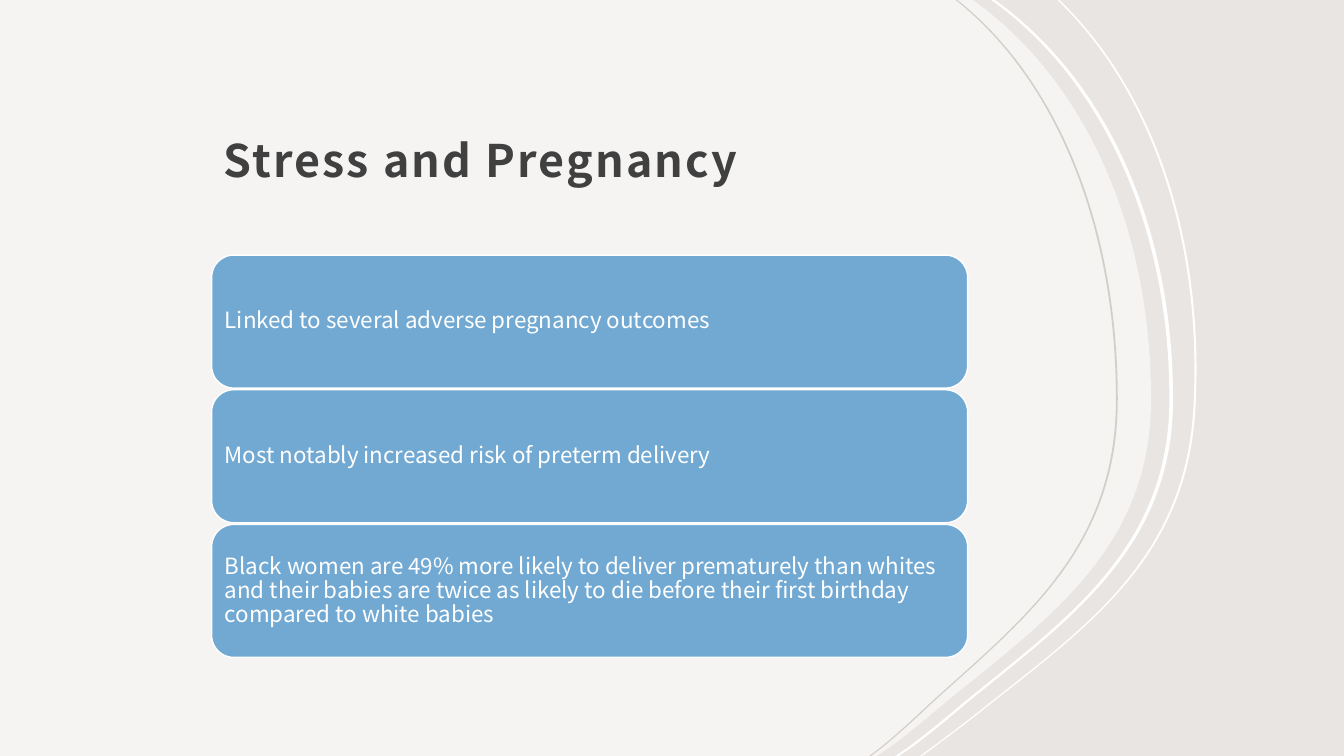
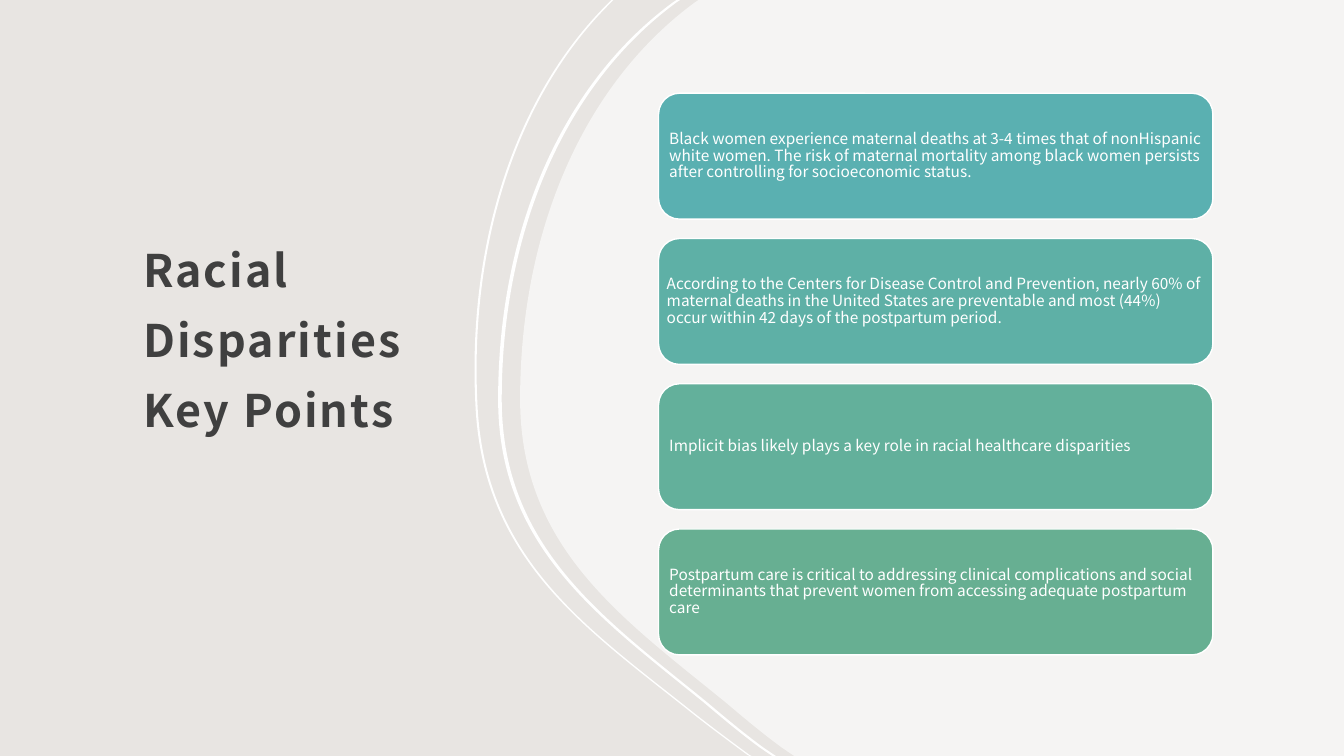
from lxml.etree import SubElement
from pptx import Presentation
from pptx.dml.color import RGBColor
from pptx.enum.shapes import MSO_SHAPE
from pptx.enum.text import MSO_ANCHOR, PP_ALIGN
from pptx.oxml.ns import qn
from pptx.util import Pt

WIDTH, HEIGHT = 960, 540
FONT = "Noto Sans CJK JP"
SAND, WHITE, GREY, DARK = "E8E5E2", "FFFFFF", "D4CEC8", "404040"
BLUE = "72A9D2"
TITLE = {"size": Pt(32), "bold": True, "name": FONT}

EDGE = [
    (127.5, 0), (125.3, 1.4),
    (45.4, 59.8), (0, 164.9), (0, 285.1),
    (0, 391), (72.7, 441.4), (146.9, 501.8),
    (160.6, 513.4), (173.5, 524.2), (187.2, 534.2), (195.8, 540),
]
SLIM = [
    (97.2, 0), (95, 2.2),
    (28.8, 67.7), (-5.8, 172.8), (0, 288.7),
    (5, 399.6), (78.5, 448.6), (153.4, 508.3),
    (167, 519.1), (180.7, 529.2), (194.4, 539.3), (195.8, 540),
]
SLIM_STRAND = (SLIM, 31.9, 1.5, 1, WHITE)
BOLD_STRAND = (EDGE, 15.7, 2.6, 1, WHITE)
GREY_STRAND = (EDGE, -23.8, 1.3, 0.9, GREY)


def rgb(value):
    """Turn a hex string into a colour."""
    return RGBColor.from_string(value)


def apply(target, values):
    """Set every attribute in a dict of format values."""
    for name, value in values.items():
        setattr(target, name, value)


def segments(points):
    """Split points into a line, three cubic curves and a line."""
    curves = [points[i:i + 3] for i in range(2, len(points) - 1, 3)]
    return [points[:1], points[1:2], *curves, points[-1:]]


def add_outline(s, parts, color, alpha=None):
    """Draw a filled closed outline of straight and curved segments."""
    parts = [[(Pt(x), Pt(y)) for x, y in part] for part in parts]
    builder = s.shapes.build_freeform(*parts[0][-1], scale=1.0)
    builder.add_line_segments([part[-1] for part in parts[1:]], close=True)
    sp = builder.convert_to_shape()
    lines = list(sp.element.iter(qn("a:lnTo")))
    for line, part in zip(lines, parts[1:]):
        if len(part) == 3:
            line.tag
            curve = line.makeelement(qn("a:cubicBezTo"))
            for x, y in part:
                pt = SubElement(curve, qn("a:pt"))
                pt.set("x", str(x - sp.left))
                pt.set("y", str(y - sp.top))
            line.getparent().replace(line, curve)
    sp.shadow.inherit = False
    sp.fill.solid()
    sp.fill.fore_color.rgb = rgb(color)
    sp.line.fill.background()
    if alpha:
        clr = sp.element.spPr.find(".//" + qn("a:srgbClr"))
        SubElement(clr, qn("a:alpha")).set("val", str(alpha * 1000))


def add_sweep(s, peak, facing, strands):
    """Draw the pale panel and the strands that follow its curved edge."""
    far = 0 if facing > 0 else WIDTH
    edge = [(peak - facing * d, y) for d, y in EDGE]
    add_outline(s, [[(far, 0)], *segments(edge), [(far, HEIGHT)]], WHITE, 60)
    for curve, offset, width, scale, color in strands:
        outer = [(peak + facing * (offset - scale * d), y) for d, y in curve]
        inner = [(x - facing * width, y) for x, y in reversed(outer)]
        add_outline(s, segments(outer) + segments(inner), color)


def write(tf, text, font, color, spacing):
    """Write one left-aligned paragraph."""
    tf.word_wrap = True
    p = tf.paragraphs[0]
    apply(p, {"alignment": PP_ALIGN.LEFT, "line_spacing": spacing})
    r = p.add_run()
    r.text = text
    apply(r.font, font)
    r.font.color.rgb = rgb(color)


def add_title(s, box, text, anchor, bottom=7.2):
    """Place the slide title in its box."""
    sp = s.shapes.add_textbox(*map(Pt, box))
    tf = sp.text_frame
    apply(tf, {"vertical_anchor": anchor, "margin_left": Pt(8.64), "margin_top": Pt(8.64),
               "margin_right": Pt(8.64), "margin_bottom": Pt(bottom)})
    write(tf, text, TITLE, DARK, 1.3)
    for props in sp.element.iter(qn("a:rPr")):
        props.set("spc", "150")


def add_cards(s, box, gap, size, cards):
    """Stack equal rounded cards of (text, colour, inset) in a box."""
    x, y, w, h = box
    height = (h - gap * (len(cards) - 1)) / len(cards)
    for i, (text, color, inset) in enumerate(cards):
        top = y + i * (height + gap)
        sp = s.shapes.add_shape(MSO_SHAPE.ROUNDED_RECTANGLE, *map(Pt, (x, top, w, height)))
        sp.shadow.inherit = False
        sp.fill.solid()
        sp.fill.fore_color.rgb = rgb(color)
        sp.line.color.rgb = rgb(WHITE)
        sp.line.width = Pt(1)
        tf = sp.text_frame
        tf.vertical_anchor = MSO_ANCHOR.MIDDLE
        apply(tf, {f"margin_{side}": Pt(inset) for side in ("left", "top", "right", "bottom")})
        write(tf, text, {"size": Pt(size), "name": FONT}, WHITE, 0.9)


def new_slide(prs):
    """Add a blank slide with the sand background."""
    s = prs.slides.add_slide(prs.slide_layouts[6])
    s.background.fill.solid()
    s.background.fill.fore_color.rgb = rgb(SAND)
    return s


def stress_slide(prs):
    """Build the slide on stress and pregnancy."""
    s = new_slide(prs)
    add_sweep(s, 822.2, 1, [SLIM_STRAND, BOLD_STRAND, GREY_STRAND])
    add_title(s, (151.2, 34.6, 540, 105.8), "Stress and Pregnancy", MSO_ANCHOR.BOTTOM)
    add_cards(s, (151.2, 182.2, 540, 287.4), 1.2, 16, [
        ("Linked to several adverse pregnancy outcomes", BLUE, 4.8),
        ("Most notably increased risk of preterm delivery", BLUE, 4.8),
        ("Black women are 49% more likely to deliver prematurely than whites and their babies "
         "are twice as likely to die before their first birthday compared to white babies",
         BLUE, 4.8),
    ])


def disparities_slide(prs):
    """Build the slide on racial disparities."""
    s = new_slide(prs)
    add_title(s, (93.6, 87.1, 237.6, 337), "Racial Disparities Key Points",
              MSO_ANCHOR.MIDDLE, 46)
    add_sweep(s, 371.5, -1, [SLIM_STRAND, BOLD_STRAND])
    add_cards(s, (470.4, 66.6, 396, 401.2), 13.8, 11, [
        ("Black women experience maternal deaths at 3-4 times that of nonHispanic white women. "
         "The risk of maternal mortality among black women persists after controlling for "
         "socioeconomic status.", "5AB0B1", 3.3),
        ("According to the Centers for Disease Control and Prevention, nearly 60% of maternal "
         "deaths in the United States are preventable and most (44%) occur within 42 days of "
         "the postpartum period.", "5EB0A6", 1.5),
        ("Implicit bias likely plays a key role in racial healthcare disparities",
         "63B09B", 3.3),
        ("Postpartum care is critical to addressing clinical complications and social "
         "determinants that prevent women from accessing adequate postpartum care",
         "67AF92", 3.3),
    ])


def main():
    """Build and save the presentation."""
    prs = Presentation()
    apply(prs, {"slide_width": Pt(WIDTH), "slide_height": Pt(HEIGHT)})
    stress_slide(prs)
    disparities_slide(prs)
    prs.save("out.pptx")


if __name__ == "__main__":
    main()
